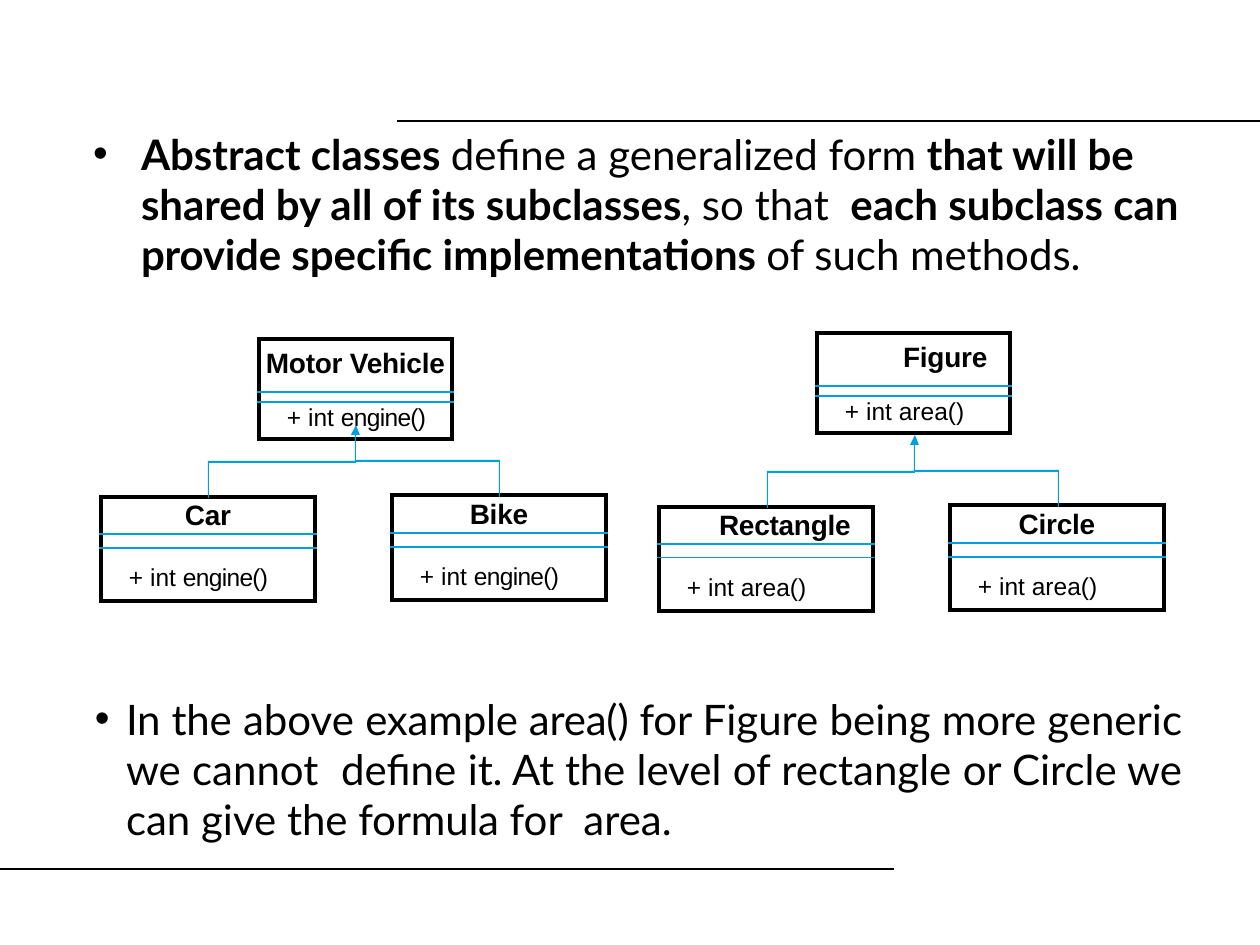
from itertools import cycle

from lxml.etree import SubElement
from pptx import Presentation
from pptx.dml.color import RGBColor
from pptx.enum.shapes import MSO_CONNECTOR
from pptx.enum.text import MSO_AUTO_SIZE as AutoSize, PP_ALIGN as Align
from pptx.oxml.ns import qn
from pptx.util import Pt

PX = 914400 / 126
COLORS = {"ink": "000000", "accent": "00A0DF"}
HEAVY, THIN = ("ink", 2.25), ("accent", 0.75)


def emu(px):
    return round(px * PX)


def rgb(name):
    return RGBColor.from_string(COLORS[name])


def apply(target, **formats):
    for name, value in formats.items():
        setattr(target, name, value)


class SlideWriter:
    body = {"name": "Lato", "size": Pt(24)}
    class_name = {"name": "Arial", "size": Pt(16), "bold": True}
    operation = {"name": "Arial", "size": Pt(14), "bold": False}

    def __init__(self, slide):
        self.slide = slide

    def run(self, paragraph, text, style, spacing=0, **extra):
        run = paragraph.add_run()
        run.text = text
        apply(run.font, **style, **extra)
        run.font.color.rgb = rgb("ink")
        run._r.get_or_add_rPr().set("spc", str(spacing))

    def indent(self, paragraph, left, first=0):
        props = paragraph._p.get_or_add_pPr()
        props.set("marL", str(emu(left)))
        props.set("indent", str(emu(first)))
        return props

    def bullet(self, box, runs, left, first, **formats):
        frame = self.slide.shapes.add_textbox(*map(emu, box)).text_frame
        apply(frame, word_wrap=True, auto_size=AutoSize.SHAPE_TO_FIT_TEXT,
              margin_left=0, margin_right=0, margin_top=emu(1), margin_bottom=0)
        paragraph = frame.paragraphs[0]
        apply(paragraph, **formats)
        props = self.indent(paragraph, left, first)
        SubElement(props, qn("a:buFont")).set("typeface", "Arial")
        SubElement(props, qn("a:buChar")).set("char", "•")
        for text, bold, spacing in runs:
            self.run(paragraph, text, self.body, spacing, bold=bold)

    def borders(self, cell, **sides):
        props = cell._tc.get_or_add_tcPr()
        for side, (color, width) in sides.items():
            line = SubElement(props, qn(f"a:ln{side}"), w=str(Pt(width)))
            fill = SubElement(line, qn("a:solidFill"))
            SubElement(fill, qn("a:srgbClr")).set("val", COLORS[color])

    def class_box(self, x, y, width, rows, name, operation, name_indent=None, line=None):
        frame = self.slide.shapes.add_table(3, 1, *map(emu, (x, y, width, sum(rows))))
        table = frame.table
        apply(table, first_row=False, horz_banding=False)
        top_margins = (9, 0, 2 if rows[2] < 40 else 16)
        cells = [table.cell(i, 0) for i in range(3)]
        for i, (cell, height, margin) in enumerate(zip(cells, rows, top_margins)):
            table.rows[i].height = emu(height)
            apply(cell, margin_left=0, margin_right=0, margin_top=emu(margin), margin_bottom=0)
            self.borders(cell, L=HEAVY, R=HEAVY, T=THIN if i else HEAVY, B=THIN if i < 2 else HEAVY)
            cell.fill.background()
        title, spacer, method = (cell.text_frame.paragraphs[0] for cell in cells)
        if line:
            title.line_spacing = Pt(line)
        if name_indent is None:
            title.alignment = Align.CENTER
        else:
            self.indent(title, name_indent)
        self.run(title, name, self.class_name, -10)
        SubElement(spacer._p, qn("a:endParaRPr")).set("sz", "200")
        self.indent(method, 28)
        self.run(method, "+ int ", self.operation)
        self.run(method, operation, self.operation, -40 if operation == "engine()" else 0)

    def inheritance(self, x, y):
        outline = [(292, 35), (148, 35), (148, 10), (152, 10), (148, 0), (143, 10),
                   (147, 10), (147, 36), (0, 36), (0, 73), (1, 73), (1, 38),
                   (148, 38), (148, 37), (291, 37), (291, 72), (292, 72)]
        points = [(x + dx, y + dy) for dx, dy in outline]
        builder = self.slide.shapes.build_freeform(*points[0], scale=PX)
        builder.add_line_segments(points[1:], close=True)
        arrow = builder.convert_to_shape()
        arrow.shadow.inherit = False
        arrow.fill.solid()
        arrow.fill.fore_color.rgb = rgb("accent")
        arrow.line.fill.background()

    def rule(self, left, right, y):
        rule = self.slide.shapes.add_connector(MSO_CONNECTOR.STRAIGHT, *map(emu, (left, y, right, y)))
        rule.line.color.rgb = rgb("ink")
        rule.line.width = Pt(0.75)
        SubElement(rule._element.spPr, qn("a:effectLst"))


def main():
    deck = Presentation()
    apply(deck, slide_width=emu(1260), slide_height=emu(945))
    writer = SlideWriter(deck.slides.add_slide(deck.slide_layouts[6]))

    definition = [
        ("Abstract classes ", True, 0),
        ("define a generalized form ", False, 0),
        ("that will be shared by all of its subclasses", True, 0),
        (", so that  ", False, 0),
        ("each subclass can", True, 0),
        (" provide ", True, -10),
        ("specific implementations ", True, 0),
        ("of such methods.", False, 0),
    ]
    writer.bullet((92, 127, 1090, 205), definition, 49, -48,
                  space_before=Pt(6), space_after=Pt(6))

    example = ["In the ", "above ", "example area() for ", "Figure being ", "more ",
               "generic we cannot  define ", "it. At the ", "level of rectangle ", "or ",
               "Circle we can give the ", "formula ", "for  area."]
    example_runs = [(text, False, spacing) for text, spacing in zip(example, cycle((-10, 0)))]
    writer.bullet((92, 692, 1090, 155), example_runs, 34, -31,
                  space_before=Pt(1), alignment=Align.JUSTIFY)

    parent_rows, left_rows, right_rows = (53, 10, 37), (37, 14, 53), (38, 14, 53)
    families = [
        (659, 507, "area()", ("Figure", 86), ("Rectangle", 60), "Circle", (767, 435)),
        (101, 497, "engine()", ("Motor Vehicle", None), ("Car", None), "Bike", (208, 425)),
    ]
    for x, y, operation, parent, left_child, right_child, arrow in families:
        parent_y = 333 if operation == "area()" else 339
        writer.class_box(x + 158, parent_y, 193, parent_rows, parent[0], operation, parent[1])
        writer.class_box(x, y, 214, left_rows, left_child[0], operation, left_child[1], 14.3)
        writer.class_box(x + 291, y - 2, 214, right_rows, right_child, operation, line=15.2)
        writer.inheritance(*arrow)

    writer.rule(0, 894, 869)
    writer.rule(397, 1260, 121)
    deck.save("out.pptx")


if __name__ == "__main__":
    main()
